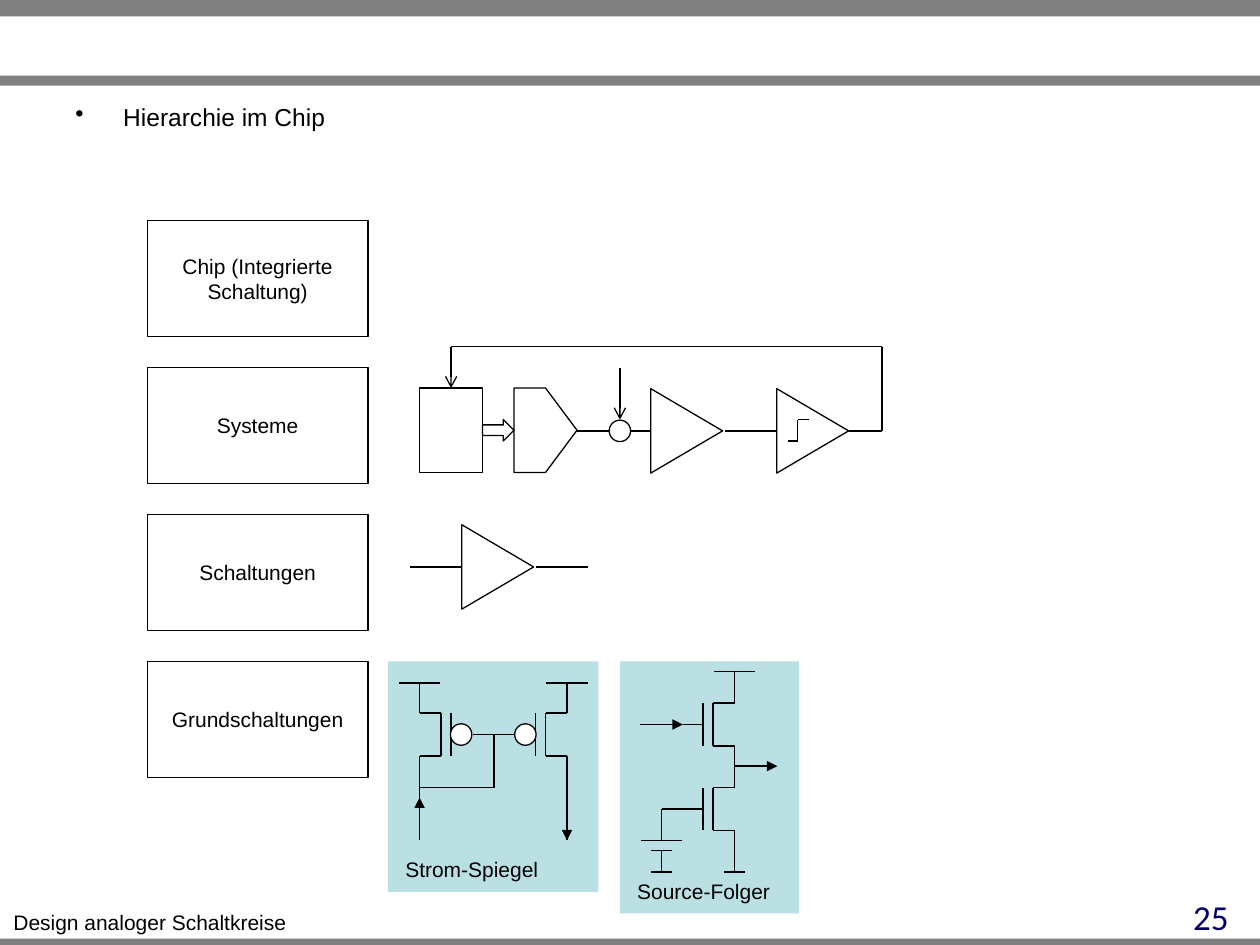
"""Build the slide on the hierarchy levels inside an analog chip."""
from dataclasses import dataclass
from itertools import pairwise
from typing import Optional

from lxml import etree
from pptx import Presentation
from pptx.dml.color import RGBColor
from pptx.enum import shapes, text
from pptx.oxml import ns
from pptx.util import Inches, Pt

Point = tuple[float, float]
Kind = shapes.MSO_SHAPE
Align = text.PP_ALIGN
BLACK, WHITE, GRAY, NAVY, TEAL = "000000", "FFFFFF", "808080", "000066", "BBE0E3"
LINE_WIDTH = 0.75

deck = Presentation()
deck.slide_width, deck.slide_height = Inches(10), Inches(7.5)
page = deck.slides.add_slide(deck.slide_layouts[6])


@dataclass(frozen=True)
class Label:
    words: str
    left: float
    top: float
    width: float
    height: float
    align: Align = Align.CENTER
    size: float = 12
    font: str = "Arial"
    color: str = BLACK
    wrap: bool = True


@dataclass(frozen=True)
class Transistor:
    terminal_x: float
    middle_y: float
    side: int
    inverted: bool = False


def paint(target, color: str) -> None:
    """Give a fill a solid colour."""
    target.solid()
    target.fore_color.rgb = RGBColor.from_string(color)


def write(frame, words: str, align: Align, size: float, font: str, color: str) -> None:
    """Set one paragraph of text and format its runs."""
    frame.text = words
    para = frame.paragraphs[0]
    para.alignment = align
    for span in para.runs:
        span.font.size, span.font.name = Pt(size), font
        span.font.color.rgb = RGBColor.from_string(color)


def add_label(label: Label):
    """Add a text box and return its frame."""
    box = page.shapes.add_textbox(Inches(label.left), Inches(label.top),
                                  Inches(label.width), Inches(label.height))
    frame = box.text_frame
    frame.word_wrap = label.wrap
    write(frame, label.words, label.align, label.size, label.font, label.color)
    return frame


def add_bullet(para, indent: float) -> None:
    """Give a paragraph a hanging bullet."""
    props = para._p.get_or_add_pPr()
    props.set("marL", str(Inches(indent)))
    props.set("indent", str(-Inches(indent)))
    etree.SubElement(props, ns.qn("a:buChar")).set("char", "•")


def add_block(kind: Kind, left: float, top: float, width: float, height: float,
              fill: Optional[str] = None, outline: bool = True):
    """Add a preset shape with an optional fill and outline."""
    block = page.shapes.add_shape(kind, Inches(left), Inches(top), Inches(width), Inches(height))
    block.shadow.inherit = False
    if fill:
        paint(block.fill, fill)
    else:
        block.fill.background()
    if outline:
        paint(block.line.fill, BLACK)
        block.line.width = Pt(LINE_WIDTH)
    else:
        block.line.fill.background()
    return block


def add_wire(*points: Point, arrow: str = "") -> None:
    """Connect points with straight lines, with an arrowhead at the last one."""
    for start, end in pairwise(points):
        wire = page.shapes.add_connector(shapes.MSO_CONNECTOR.STRAIGHT,
                                         *map(Inches, start + end))
        paint(wire.line.fill, BLACK)
        wire.line.width = Pt(LINE_WIDTH)
        if arrow and end == points[-1]:
            etree.SubElement(wire.line._get_or_add_ln(), ns.qn("a:tailEnd")).set("type", arrow)
        etree.SubElement(wire._element.spPr, ns.qn("a:effectLst"))


def add_bar(center_x: float, y: float, width: float) -> None:
    """Add a horizontal bar such as a supply rail or a ground."""
    add_wire((center_x - width / 2, y), (center_x + width / 2, y))


def add_amplifier(center_x: float, center_y: float) -> None:
    """Add a triangle that points to the right."""
    width, height = 0.67, 0.57
    block = add_block(Kind.ISOSCELES_TRIANGLE, center_x - width / 2, center_y - height / 2,
                      width, height)
    block.rotation = 90


def add_ring(center_x: float, center_y: float, fill: Optional[str] = None) -> None:
    """Add a small circle."""
    size = 0.17
    add_block(Kind.OVAL, center_x - size / 2, center_y - size / 2, size, size, fill)


def add_transistor(device: Transistor) -> None:
    """Add a transistor with its leads, channel and gate plate."""
    x, y = device.terminal_x, device.middle_y
    channel, plate = x + 0.17 * device.side, x + 0.25 * device.side
    half, lead = 0.17, 0.25
    add_wire((x, y - half - lead), (x, y - half), (channel, y - half),
             (channel, y + half), (x, y + half), (x, y + half + lead))
    add_wire((plate, y - half), (plate, y + half))
    if device.inverted:
        add_ring(plate + 0.08 * device.side, y, WHITE)


def add_frame() -> None:
    """Draw the gray bands, footer, page number and heading."""
    for top, height in ((0, 0.13), (0.6, 0.08), (7.45, 0.08)):
        add_block(Kind.RECTANGLE, 0, top, 10, height, GRAY, outline=False)
    add_label(Label("Design analoger Schaltkreise", 0, 7.17, 2.38, 0.3, wrap=False))
    add_label(Label("25", 7.52, 7.06, 2.33, 0.31, Align.RIGHT, 20, "Calibri", NAVY))
    heading = add_label(Label("Hierarchie im Chip", 0.5, 0.76, 9, 0.99, Align.LEFT, 14))
    add_bullet(heading.paragraphs[0], 0.38)


def add_levels() -> None:
    """Draw the column of hierarchy levels."""
    levels = ("Chip (Integrierte Schaltung)", "Systeme", "Schaltungen", "Grundschaltungen")
    pitch = 3.5 / (len(levels) - 1)
    for row, name in enumerate(levels):
        block = add_block(Kind.RECTANGLE, 1.17, 1.75 + row * pitch, 1.75, 0.92)
        block.text_frame.vertical_anchor = text.MSO_ANCHOR.MIDDLE
        write(block.text_frame, name, Align.CENTER, 12, "Arial", BLACK)


def add_system() -> None:
    """Draw the feedback loop and the single amplifier below it."""
    axis = 3.42
    add_block(Kind.RECTANGLE, 3.33, 3.08, 0.5, 0.67)
    add_block(Kind.RIGHT_ARROW, 3.83, 3.33, 0.25, 0.17)
    add_block(Kind.PENTAGON, 4.08, 3.08, 0.5, 0.67)
    add_ring(4.92, axis)
    for center_x in (5.45, 6.45):
        add_amplifier(center_x, axis)
    for start, end in ((4.58, 4.83), (5, 5.17), (5.75, 6.17)):
        add_wire((start, axis), (end, axis))
    add_wire((4.92, 2.92), (4.92, 3.33), arrow="arrow")
    add_wire((6.74, axis), (7, axis), (7, 2.75), (3.58, 2.75), (3.58, 3.08), arrow="arrow")
    add_wire((6.25, 3.5), (6.33, 3.5), (6.33, 3.33), (6.42, 3.33))
    add_amplifier(3.95, 4.5)
    for start in (3.25, 4.25):
        add_wire((start, 4.5), (start + 0.42, 4.5))


def add_current_mirror() -> None:
    """Draw the current mirror panel."""
    add_block(Kind.RECTANGLE, 3.08, 5.25, 1.67, 1.83, TEAL, outline=False)
    for x, side in ((3.33, 1), (4.5, -1)):
        add_transistor(Transistor(x, 5.83, side, inverted=True))
        add_bar(x, 5.42, 0.33)
        add_wire((x, 6.25), (x, 6.67))
    add_wire((3.75, 5.83), (4.08, 5.83))
    add_wire((3.92, 5.83), (3.92, 6.25), (3.33, 6.25))
    add_wire((3.33, 6.67), (3.33, 6.33), arrow="triangle")
    add_wire((4.5, 6.33), (4.5, 6.67), arrow="triangle")
    add_label(Label("Strom-Spiegel", 3.08, 6.75, 1.33, 0.3))


def add_source_follower() -> None:
    """Draw the source follower panel."""
    add_block(Kind.RECTANGLE, 4.92, 5.25, 1.42, 2, TEAL, outline=False)
    for middle_y in (5.75, 6.42):
        add_transistor(Transistor(5.83, middle_y, -1))
    for center_x, y, width in ((5.83, 5.33, 0.33), (5.83, 6.92, 0.17), (5.25, 6.67, 0.33),
                               (5.25, 6.75, 0.17), (5.25, 6.92, 0.17)):
        add_bar(center_x, y, width)
    add_wire((5.83, 6.67), (5.83, 6.92))
    add_wire((5.83, 6.08), (6.17, 6.08), arrow="triangle")
    add_wire((5.08, 5.75), (5.42, 5.75), arrow="triangle")
    add_wire((5.42, 5.75), (5.58, 5.75))
    add_wire((5.58, 6.42), (5.25, 6.42), (5.25, 6.67))
    add_wire((5.25, 6.75), (5.25, 6.92))
    add_label(Label("Source-Folger", 4.92, 6.92, 1.33, 0.3))


if __name__ == "__main__":
    for draw in (add_frame, add_levels, add_system, add_current_mirror, add_source_follower):
        draw()
    deck.save("out.pptx")
